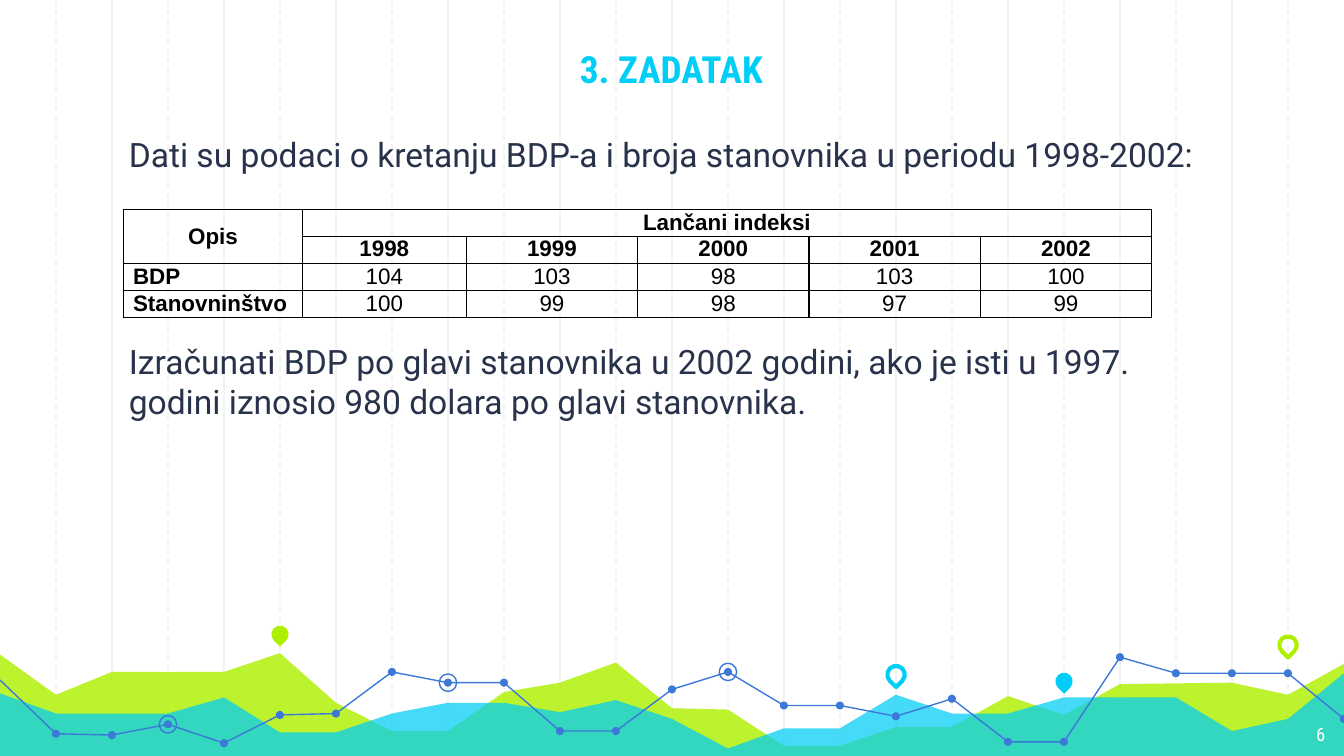
from dataclasses import dataclass

from lxml.etree import SubElement
from pptx import Presentation
from pptx.dml.color import RGBColor
from pptx.enum.dml import MSO_LINE
from pptx.enum.shapes import MSO_CONNECTOR, MSO_SHAPE
from pptx.enum.text import MSO_ANCHOR, MSO_AUTO_SIZE, PP_ALIGN
from pptx.oxml.ns import qn
from pptx.util import Inches, Pt


@dataclass(frozen=True)
class Theme:
    grid: str = "F3F3F3"
    green: str = "AFF000"
    cyan: str = "00CEF6"
    blue: str = "3C78D8"
    ink: str = "28324A"
    black: str = "000000"
    white: str = "FFFFFF"
    heading: str = "Roboto Condensed"
    body: str = "Roboto"
    table: str = "Arial"
    title_size: int = 20
    body_size: int = 18
    table_size: int = 12
    number_size: int = 10
    thin: float = 0.75
    thick: float = 2.25


THEME = Theme()
WIDTH, HEIGHT, COLUMNS = 10, 5.625, 24
STEP = WIDTH / COLUMNS

# Content
TITLE = "3. ZADATAK"
PAGE_NUMBER = "6"
BODY = [  # text, space before in points
    ("Dati su podaci o kretanju BDP-a i broja stanovnika u periodu 1998-2002:", 0),
    ("Izračunati BDP po glavi stanovnika u 2002 godini, ako je isti u 1997. "
     "godini iznosio 980 dolara po glavi stanovnika.", 89),
]
TABLE = [
    ["Opis", "Lančani indeksi", "", "", "", ""],
    ["", "1998", "1999", "2000", "2001", "2002"],
    ["BDP", "104", "103", "98", "103", "100"],
    ["Stanovninštvo", "100", "99", "98", "97", "99"],
]

# Backdrop landscape: heights by grid column
AREAS = [  # colour, opacity in percent, {column: height}
    (THEME.green, 82, {
        0: 4.87, 1: 5.17, 2: 5, 4: 5, 5: 4.86, 6: 5.23, 7: 5.44, 8: 5.44,
        9: 5.15, 10: 5.08, 11: 4.93, 12: 5.27, 13: 5.28, 14: 5.55, 15: 5.55,
        16: 5.41, 17: 5.41, 18: 5.18, 19: 5.32, 20: 5.09, 22: 5.08, 23: 5.17,
        24: 4.94}),
    (THEME.cyan, 73, {
        0: 5.16, 1: 5.31, 3: 5.31, 4: 5.19, 5: 5.45, 6: 5.45, 7: 5.31, 8: 5.23,
        9: 5.23, 10: 5.3, 11: 5.21, 12: 5.35, 13: 5.57, 14: 5.42, 15: 5.42,
        16: 5.17, 17: 5.31, 18: 5.31, 19: 5.19, 21: 5.19, 22: 5.44, 23: 5.35,
        24: 5.01}),
]
TREND = [5.06, 5.46, 5.47, 5.39, 5.53, 5.32, 5.31, 5, 5.08, 5.08, 5.44, 5.44,
         5.13, 5, 5.25, 5.25, 5.33, 5.2, 5.52, 5.52, 4.89, 5.01, 5.01, 5.01, 5.35]
TREND_BREAKS = [0, 11, 20, 24]
RINGED = [3, 8, 13]
PINS = [  # column, centre height, colour, filled
    (5, 4.72, THEME.green, True), (16, 5.02, THEME.cyan, False),
    (19, 5.07, THEME.cyan, True), (23, 4.8, THEME.green, False),
]


def color(value):
    return RGBColor.from_string(value)


def paint(shape, fill=None, line=None, weight=THEME.thin):
    shape.shadow.inherit = False
    if fill:
        shape.fill.solid()
        shape.fill.fore_color.rgb = color(fill)
    else:
        shape.fill.background()
    if line:
        shape.line.color.rgb = color(line)
        shape.line.width = Pt(weight)
    else:
        shape.line.fill.background()


def add_marker(shapes, kind, column, y, size, **style):
    shape = shapes.add_shape(kind, Inches(column * STEP - size / 2),
                             Inches(y - size / 2), Inches(size), Inches(size))
    paint(shape, **style)
    return shape


def add_outline(shapes, points, close):
    corners = [(Inches(x), Inches(y)) for x, y in points]
    builder = shapes.build_freeform(*corners[0])
    builder.add_line_segments(corners[1:], close=close)
    return builder.convert_to_shape()


def add_gridline(shapes, column, dashed):
    x = Inches(column * STEP)
    line = shapes.add_connector(MSO_CONNECTOR.STRAIGHT, x, 0, x, Inches(HEIGHT))
    line.line.color.rgb = color(THEME.grid)
    line.line.width = Pt(THEME.thin)
    if dashed:
        line.line.dash_style = MSO_LINE.DASH
    SubElement(line.element.spPr, qn("a:effectLst"))


def write(paragraph, text, font, size, ink, bold=False, align=PP_ALIGN.LEFT):
    paragraph.alignment = align
    run = paragraph.add_run()
    run.text = text
    run.font.name, run.font.size, run.font.bold = font, Pt(size), bold
    run.font.color.rgb = color(ink)


def prepare_frame(frame, anchor=MSO_ANCHOR.TOP):
    frame.word_wrap = True
    frame.auto_size = MSO_AUTO_SIZE.NONE
    frame.vertical_anchor = anchor
    frame.margin_left = frame.margin_right = Inches(0.1)
    frame.margin_top = frame.margin_bottom = Inches(0.1)
    return frame


def add_text_box(shapes, *box):
    return prepare_frame(shapes.add_textbox(*map(Inches, box)).text_frame)


def set_borders(cell):
    properties = cell._tc.get_or_add_tcPr()
    for index, side in enumerate(("lnL", "lnR", "lnT", "lnB")):
        border = properties.makeelement(qn(f"a:{side}"), {"w": str(Pt(THEME.thin))})
        fill = SubElement(border, qn("a:solidFill"))
        SubElement(fill, qn("a:srgbClr"), val=THEME.black)
        properties.insert(index, border)


def draw_backdrop(shapes):
    for start in (2, 1):
        for column in range(start, COLUMNS, 2):
            add_gridline(shapes, column, dashed=start == 1)

    for fill, opacity, heights in AREAS:
        points = [(column * STEP, y) for column, y in heights.items()]
        points += [(WIDTH, HEIGHT), (0, HEIGHT)]
        area = add_outline(shapes, points, close=True)
        paint(area, fill=fill)
        shade = area.element.spPr.find(qn("a:solidFill"))[0]
        SubElement(shade, qn("a:alpha"), val=str(opacity * 1000))

    for column, y, ink, filled in PINS:
        style = {"fill": ink} if filled else {"line": ink, "weight": THEME.thick}
        pin = add_marker(shapes, MSO_SHAPE.TEAR, column, y, 0.13, **style)
        pin.adjustments[0] = 1
        pin.rotation = 135

    for first, last in zip(TREND_BREAKS, TREND_BREAKS[1:]):
        points = [(column * STEP, TREND[column]) for column in range(first, last + 1)]
        paint(add_outline(shapes, points, close=False), line=THEME.blue)
    for column, y in list(enumerate(TREND))[1:]:
        add_marker(shapes, MSO_SHAPE.OVAL, column, y, 0.06, fill=THEME.blue)
    for column in RINGED:
        add_marker(shapes, MSO_SHAPE.OVAL, column, TREND[column], 0.13, line=THEME.blue)


def draw_table(shapes):
    width, row_height, first_columns = 7.65, 0.2, [1.33, 1.22]
    year_width = (width - sum(first_columns)) / 4
    table = shapes.add_table(len(TABLE), len(TABLE[0]), Inches(0.92), Inches(1.56),
                             Inches(width), Inches(row_height * len(TABLE))).table
    table.first_row = table.horz_banding = False
    for column, size in zip(table.columns, first_columns + [year_width] * 4):
        column.width = Inches(size)
    for r, row in enumerate(TABLE):
        table.rows[r].height = Inches(row_height)
        for c, text in enumerate(row):
            cell = table.cell(r, c)
            cell.margin_left = cell.margin_right = Inches(0.07)
            cell.margin_top = cell.margin_bottom = 0
            cell.vertical_anchor = MSO_ANCHOR.MIDDLE if r > 1 or c == 0 else MSO_ANCHOR.TOP
            cell.fill.background()
            set_borders(cell)
            paragraph = cell.text_frame.paragraphs[0]
            paragraph.font.size = Pt(THEME.table_size)
            if text:
                write(paragraph, text, THEME.table, THEME.table_size, THEME.black,
                      bold=r < 2 or c == 0,
                      align=PP_ALIGN.LEFT if r > 1 and c == 0 else PP_ALIGN.CENTER)
    table.cell(0, 0).merge(table.cell(1, 0))
    table.cell(0, 1).merge(table.cell(0, 5))


def main():
    presentation = Presentation()
    presentation.slide_width, presentation.slide_height = Inches(WIDTH), Inches(HEIGHT)
    slide = presentation.slides.add_slide(presentation.slide_layouts[5])
    shapes = slide.shapes
    draw_backdrop(shapes)

    # Page number
    frame = add_text_box(shapes, 9.36, 5.28, 0.6, 0.35)
    write(frame.paragraphs[0], PAGE_NUMBER, THEME.heading, THEME.number_size,
          THEME.white, align=PP_ALIGN.RIGHT)

    # Task text
    frame = add_text_box(shapes, 0.74, 0.9, 8.5, 3.33)
    for index, (text, space) in enumerate(BODY):
        paragraph = frame.add_paragraph() if index else frame.paragraphs[0]
        paragraph.space_before = Pt(space)
        paragraph._p.get_or_add_pPr().set("marL", str(Inches(0.12)))
        write(paragraph, text, THEME.body, THEME.body_size, THEME.ink)

    # Title, in front of the grid
    title = shapes.title
    title.left, title.top, title.width, title.height = map(Inches, (1.17, 0, 7.65, 0.78))
    frame = prepare_frame(title.text_frame, MSO_ANCHOR.BOTTOM)
    write(frame.paragraphs[0], TITLE, THEME.heading, THEME.title_size, THEME.cyan,
          bold=True, align=PP_ALIGN.CENTER)
    title.element.getparent().append(title.element)

    draw_table(shapes)
    presentation.save("out.pptx")


if __name__ == "__main__":
    main()
